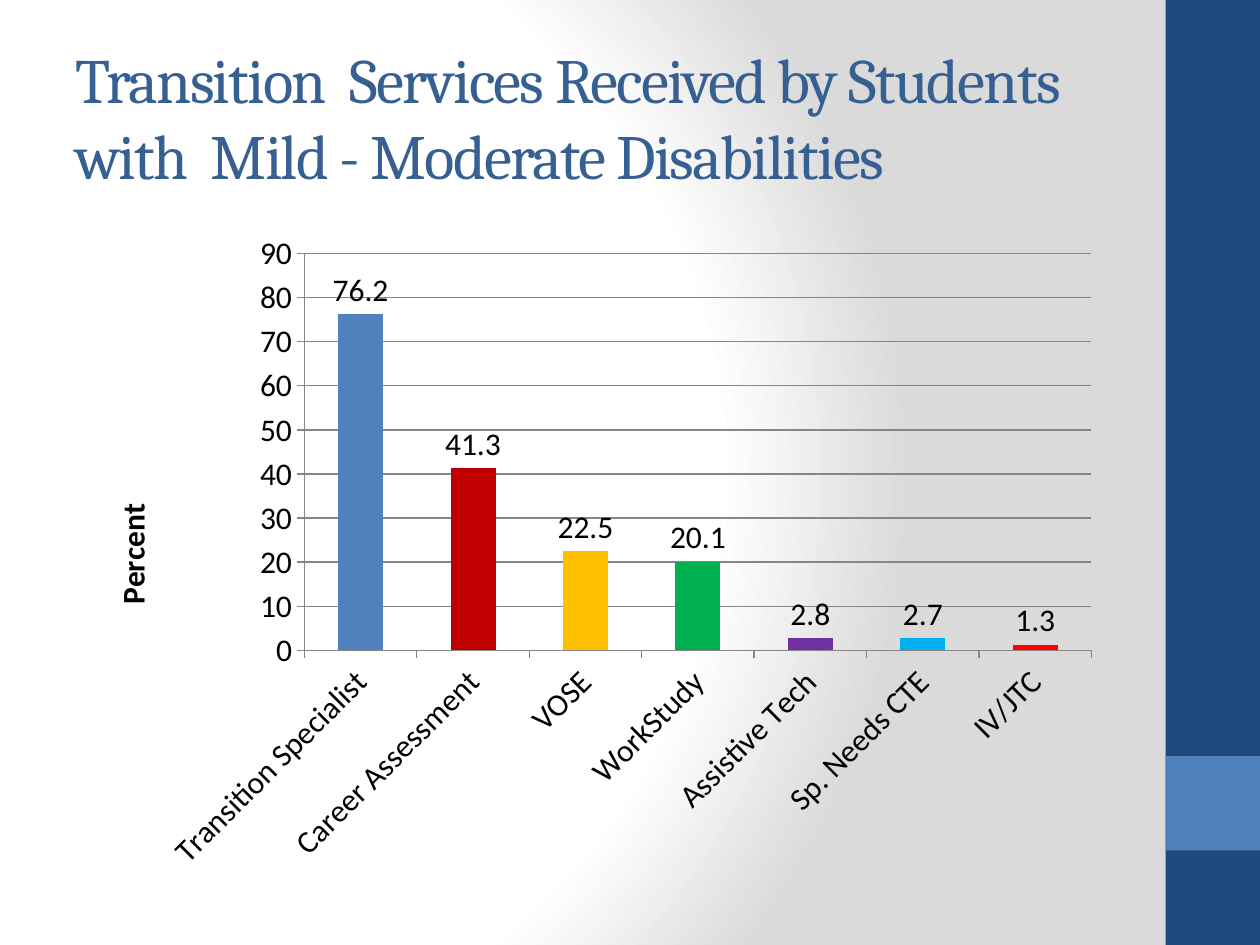
from dataclasses import dataclass

from pptx import Presentation
from pptx.chart.data import CategoryChartData
from pptx.dml.color import RGBColor
from pptx.enum.chart import XL_CHART_TYPE as ChartType
from pptx.enum.chart import XL_LABEL_POSITION as LabelPos
from pptx.enum.chart import XL_TICK_MARK as TickMark
from pptx.enum.shapes import MSO_SHAPE as Shape
from pptx.enum.text import MSO_ANCHOR as Anchor
from pptx.oxml import parse_xml
from pptx.oxml.ns import nsdecls, qn
from pptx.util import Inches, Pt


@dataclass(frozen=True)
class Theme:
    navy: str = "1F497D"
    blue: str = "4F81BD"
    title: str = "376092"
    text: str = "000000"
    grid: str = "868686"
    light: str = "FFFFFF"
    shade: str = "DADADA"
    title_font: str = "Cambria"
    chart_font: str = "Calibri"
    title_size: int = 36
    chart_size: int = 18


THEME = Theme()

# Service, percent of students, bar colour
SERVICES = [
    ("Transition Specialist", 76.2, THEME.blue),
    ("Career Assessment", 41.3, "C00000"),
    ("VOSE", 22.5, "FFC000"),
    ("WorkStudy", 20.1, "00B050"),
    ("Assistive Tech", 2.8, "7030A0"),
    ("Sp. Needs CTE", 2.7, "00B0F0"),
    ("IV/JTC", 1.3, "FF0000"),
]


def rgb(color):
    return RGBColor.from_string(color)


def set_background(slide):
    """Radial gradient, which python-pptx can only reach through XML."""
    slide.background.fill.solid()
    solid = slide.element.xpath("./p:cSld/p:bg/p:bgPr/a:solidFill")[0]
    stops = [(0, THEME.light), (75, THEME.light), (100, THEME.shade)]
    stop_xml = "".join(
        f'<a:gs pos="{pos * 1000}"><a:srgbClr val="{color}"/></a:gs>'
        for pos, color in stops
    )
    gradient = parse_xml(
        f'<a:gradFill {nsdecls("a")} rotWithShape="1"><a:gsLst>{stop_xml}</a:gsLst>'
        '<a:path path="circle"><a:fillToRect l="20000" t="50000" r="100000" b="50000"/>'
        "</a:path></a:gradFill>"
    )
    solid.getparent().replace(solid, gradient)


def add_band(slide, top, height, color):
    sp = slide.shapes.add_shape(
        Shape.RECTANGLE, Inches(9.25), Inches(top), Inches(0.75), Inches(height)
    )
    sp.shadow.inherit = False
    sp.fill.solid()
    sp.fill.fore_color.rgb = rgb(color)
    sp.line.fill.background()


def add_title(slide, text):
    box = slide.shapes.add_textbox(Inches(0.5), Inches(0.3), Inches(8.63), Inches(1.25))
    tf = box.text_frame
    tf.word_wrap = True
    tf.vertical_anchor = Anchor.MIDDLE
    tf.text = text
    r = tf.paragraphs[0].runs[0]
    r.font.name = THEME.title_font
    r.font.size = Pt(THEME.title_size)
    r.font.color.rgb = rgb(THEME.title)
    r.font._element.set("spc", "-100")


def set_layout(element, index, target="", **fractions):
    """Place a chart part by fractions of the chart area."""
    for old in element.findall(qn("c:layout")):
        element.remove(old)
    modes = '<c:xMode val="edge"/><c:yMode val="edge"/>'
    values = "".join(f'<c:{k} val="{v}"/>' for k, v in fractions.items())
    element.insert(index, parse_xml(
        f'<c:layout {nsdecls("c")}><c:manualLayout>{target}{modes}{values}'
        "</c:manualLayout></c:layout>"
    ))


def style_line(line):
    line.color.rgb = rgb(THEME.grid)
    line.width = Pt(0.75)


def style_axes(chart):
    cat, val = chart.category_axis, chart.value_axis
    for axis in (cat, val):
        axis.major_tick_mark = TickMark.OUTSIDE
        axis.minor_tick_mark = TickMark.NONE
        style_line(axis.format.line)
        axis.tick_labels.font.size = Pt(THEME.chart_size)
    cat.has_major_gridlines = False
    cat._element.find(qn("c:txPr")).find(qn("a:bodyPr")).set("rot", "-2700000")
    val.has_major_gridlines = True
    style_line(val.major_gridlines.format.line)
    val.minimum_scale, val.maximum_scale, val.major_unit = 0, 90, 10

    tf = val.axis_title.text_frame
    tf.text = "Percent"
    tf._txBody.find(qn("a:bodyPr")).set("rot", "-5400000")
    font = tf.paragraphs[0].runs[0].font
    font.name, font.size, font.bold = THEME.chart_font, Pt(THEME.chart_size), True
    font.color.rgb = rgb(THEME.text)
    set_layout(val.axis_title._element, 1, x=0.04, y=0.42)


def add_services_chart(slide):
    names, percents, colors = zip(*SERVICES)
    data = CategoryChartData(number_format="General")
    data.categories = names
    data.add_series("Series 1", percents)
    chart = slide.shapes.add_chart(
        ChartType.COLUMN_CLUSTERED,
        Inches(0.5), Inches(1.75), Inches(8.33), Inches(5.25), data,
    ).chart
    chart.has_title = False
    chart.has_legend = False
    chart.font.name = THEME.chart_font
    chart.font.size = Pt(THEME.chart_size)
    chart.font.color.rgb = rgb(THEME.text)

    plot = chart.plots[0]
    plot.vary_by_categories = False
    plot.gap_width = 150
    plot.has_data_labels = True
    labels = plot.data_labels
    labels.show_value = True
    labels.position = LabelPos.OUTSIDE_END
    labels.font.size = Pt(THEME.chart_size)

    series = plot.series[0]
    series.format.fill.solid()
    series.format.fill.fore_color.rgb = rgb(THEME.blue)
    for i, color in enumerate(colors[1:], start=1):
        fill = series.points[i].format.fill
        fill.solid()
        fill.fore_color.rgb = rgb(color)

    style_axes(chart)
    plot_area = chart.element.find(qn("c:chart")).find(qn("c:plotArea"))
    set_layout(plot_area, 0, '<c:layoutTarget val="inner"/>',
               x=0.23, y=0.05, w=0.75, h=0.6)


def main():
    prs = Presentation()
    prs.slide_width, prs.slide_height = Inches(10), Inches(7.5)
    slide = prs.slides.add_slide(prs.slide_layouts[6])
    set_background(slide)
    add_band(slide, 0, 7.5, THEME.navy)
    add_band(slide, 6, 0.75, THEME.blue)
    add_title(slide, "Transition  Services Received by Students with  Mild - Moderate Disabilities")
    add_services_chart(slide)
    prs.save("out.pptx")


if __name__ == "__main__":
    main()
